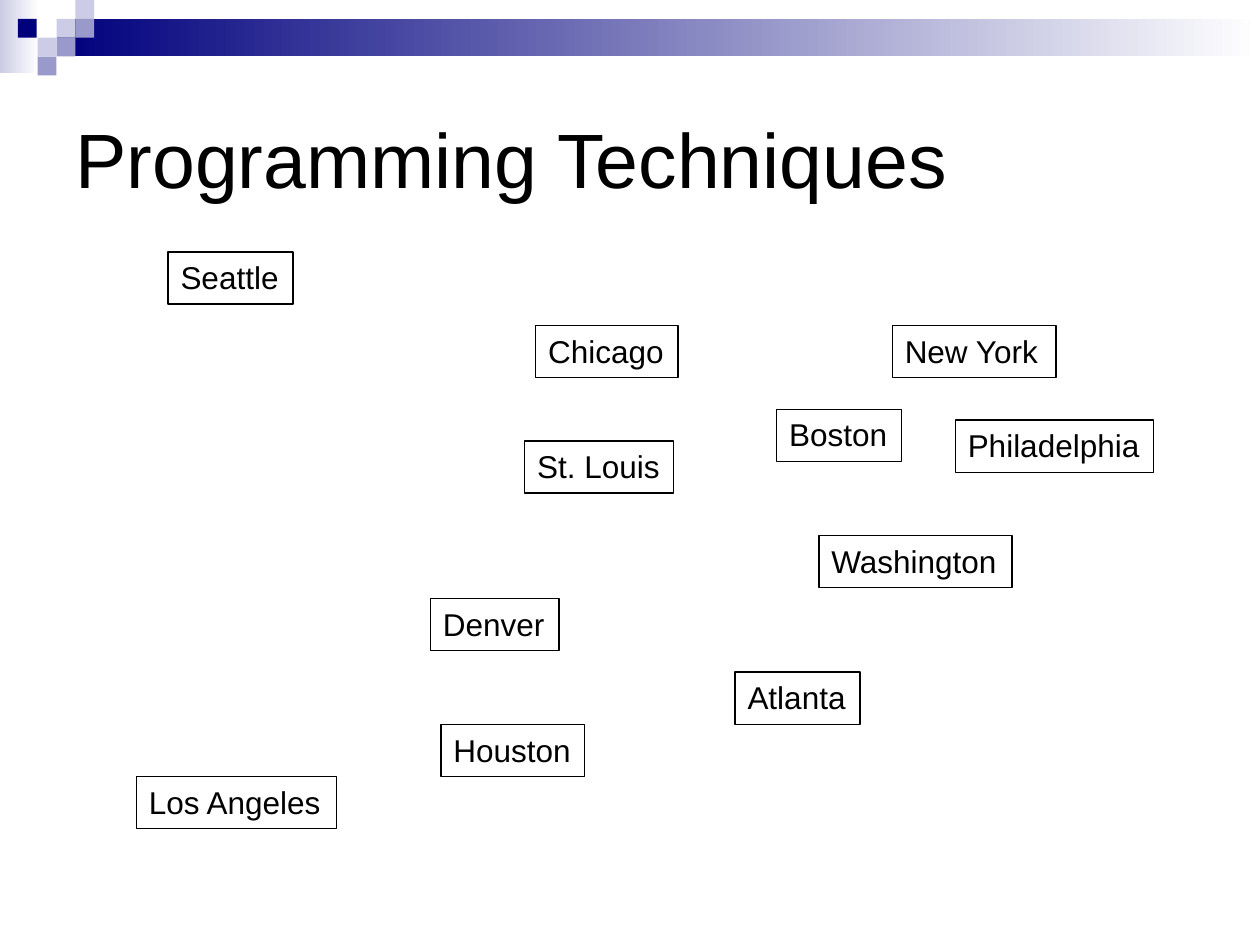
from dataclasses import dataclass

from pptx import Presentation
from pptx.dml.color import RGBColor
from pptx.enum.shapes import MSO_SHAPE
from pptx.enum.text import MSO_ANCHOR, MSO_AUTO_SIZE
from pptx.shapes.autoshape import Shape
from pptx.slide import Slide
from pptx.util import Cm, Pt

COLORS = {
    "navy": "00007D",
    "periwinkle": "9999CC",
    "lavender": "CCCCE6",
    "white": "FFFFFF",
    "black": "000000",
}
FONT = "Arial"
SQUARE = 0.38
CITY_HEIGHT = 1.05


@dataclass(frozen=True)
class Band:
    left: float
    top: float
    width: float
    height: float
    color: str


@dataclass(frozen=True)
class Square:
    column: float
    row: int
    color: str


@dataclass(frozen=True)
class City:
    name: str
    left: float
    top: float
    width: float


BANDS = [
    Band(0, 0, 0.79, 1.47, "lavender"),
    Band(1.14, 0.38, 24.26, 0.76, "navy"),
]

SQUARES = [
    Square(3, 1, "lavender"),
    Square(4, 0, "lavender"),
    Square(4, 1, "periwinkle"),
    Square(2, 2, "lavender"),
    Square(0.95, 1, "navy"),
    Square(3, 2, "periwinkle"),
    Square(2, 3, "periwinkle"),
]

CITIES = [
    City("New York", 17.99, 6.56, 3.3),
    City("Boston", 15.66, 8.25, 2.52),
    City("Washington", 16.51, 10.8, 3.89),
    City("Philadelphia", 19.26, 8.47, 3.99),
    City("Chicago", 10.8, 6.56, 2.87),
    City("Atlanta", 14.82, 13.55, 2.52),
    City("St. Louis", 10.58, 8.89, 3),
    City("Denver", 8.68, 12.07, 2.59),
    City("Houston", 8.89, 14.61, 2.9),
    City("Seattle", 3.39, 5.08, 2.52),
    City("Los Angeles", 2.75, 15.66, 4.04),
]


def color_of(name: str) -> RGBColor:
    return RGBColor.from_string(COLORS[name])


def add_rectangle(slide: Slide, left: float, top: float, width: float, height: float) -> Shape:
    shape = slide.shapes.add_shape(
        MSO_SHAPE.RECTANGLE, Cm(left), Cm(top), Cm(width), Cm(height)
    )
    shape.shadow.inherit = False
    shape.line.fill.background()
    return shape


def add_band(slide: Slide, band: Band) -> None:
    shape = add_rectangle(slide, band.left, band.top, band.width, band.height)
    shape.fill.gradient()
    shape.fill.gradient_angle = 0
    for stop, name in zip(shape.fill.gradient_stops, (band.color, "white")):
        stop.color.rgb = color_of(name)


def add_square(slide: Slide, square: Square) -> None:
    shape = add_rectangle(
        slide, square.column * SQUARE, square.row * SQUARE, SQUARE, SQUARE
    )
    shape.fill.solid()
    shape.fill.fore_color.rgb = color_of(square.color)


def set_text(shape: Shape, text: str, size: int) -> None:
    shape.text_frame.text = text
    font = shape.text_frame.paragraphs[0].runs[0].font
    font.name = FONT
    font.size = Pt(size)
    font.color.rgb = color_of("black")


def add_title(slide: Slide, text: str) -> None:
    shape = slide.shapes.add_textbox(Cm(1.27), Cm(1.27), Cm(22.86), Cm(3.81))
    shape.text_frame.word_wrap = True
    shape.text_frame.vertical_anchor = MSO_ANCHOR.MIDDLE
    set_text(shape, text, 44)


def add_city(slide: Slide, city: City) -> None:
    shape = slide.shapes.add_textbox(
        Cm(city.left), Cm(city.top), Cm(city.width), Cm(CITY_HEIGHT)
    )
    shape.line.color.rgb = color_of("black")
    shape.line.width = Pt(0.75)
    shape.text_frame.word_wrap = False
    shape.text_frame.auto_size = MSO_AUTO_SIZE.SHAPE_TO_FIT_TEXT
    set_text(shape, city.name, 18)


def main() -> None:
    presentation = Presentation()
    presentation.slide_width = Cm(25.4)
    presentation.slide_height = Cm(19.05)
    slide = presentation.slides.add_slide(presentation.slide_layouts[6])
    for band in BANDS:
        add_band(slide, band)
    for square in SQUARES:
        add_square(slide, square)
    add_title(slide, "Programming Techniques")
    for city in CITIES:
        add_city(slide, city)
    presentation.save("out.pptx")


if __name__ == "__main__":
    main()
